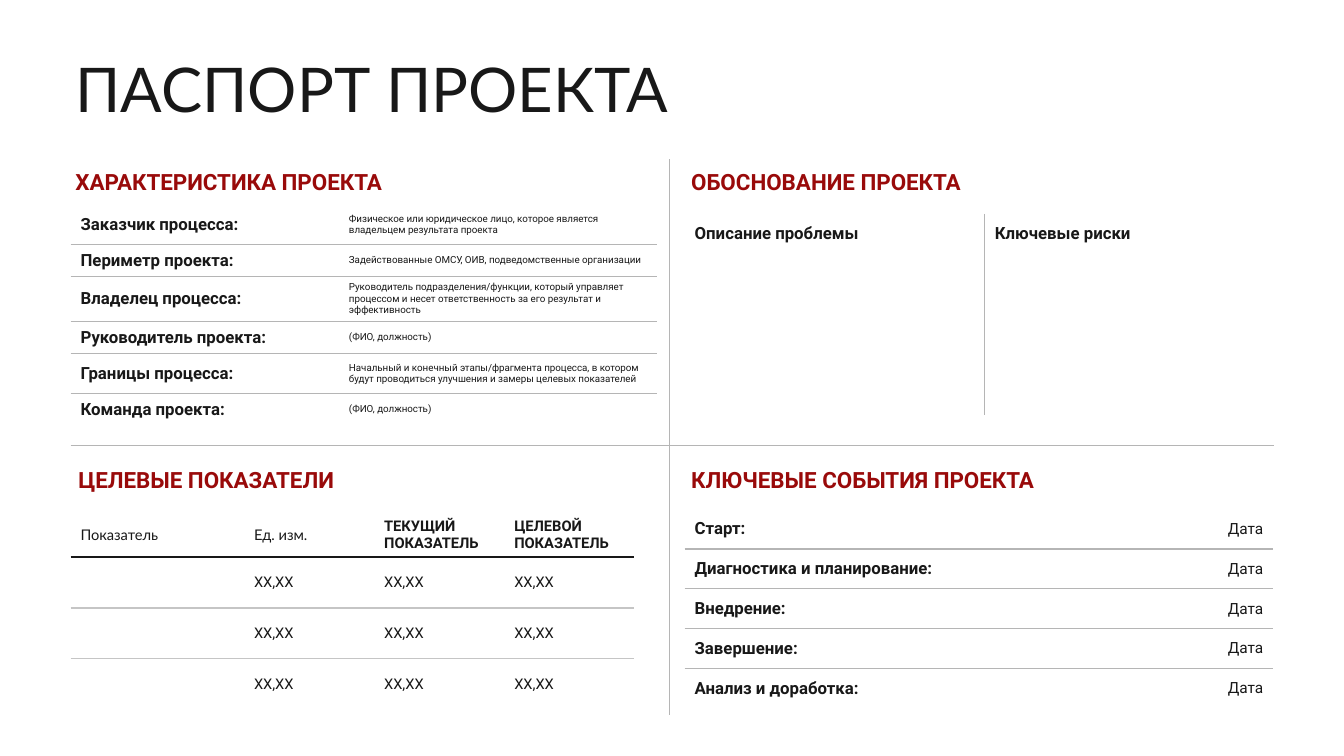
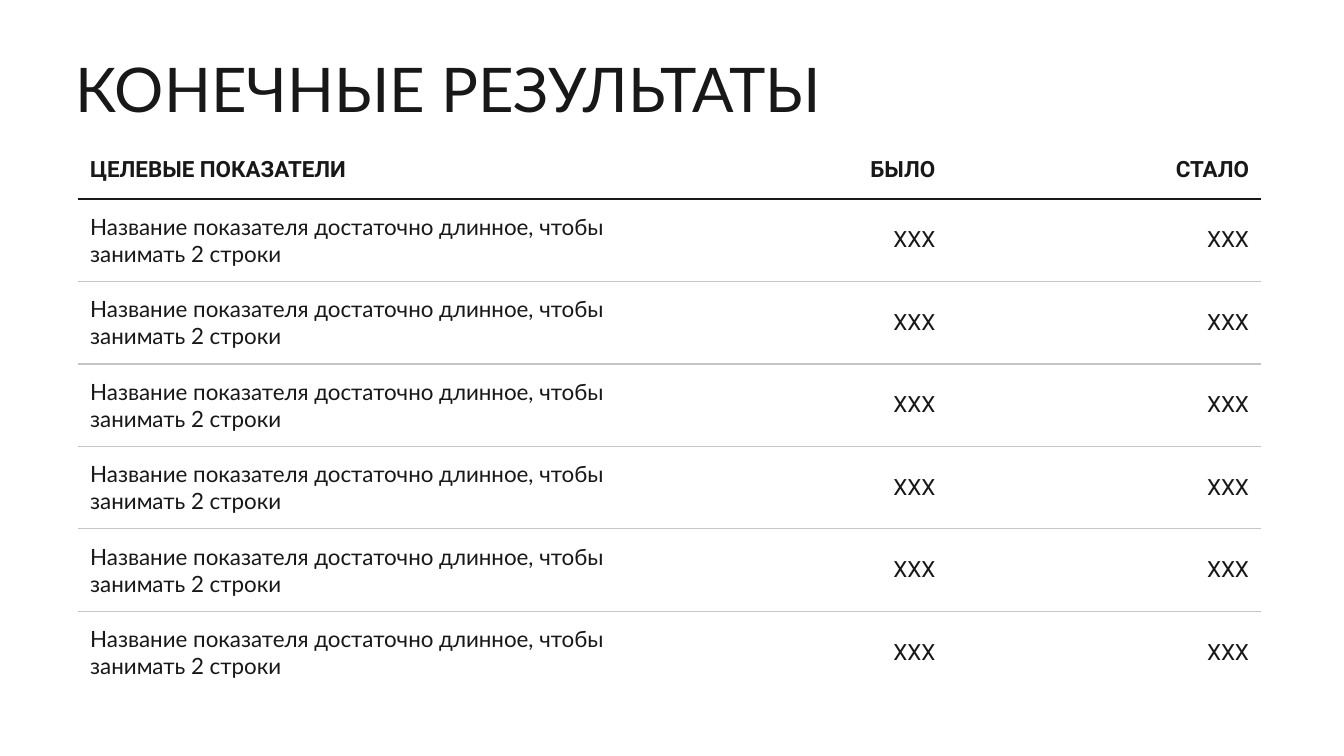
from dataclasses import dataclass
from typing import Optional

import pptx
import pptx.dml.color
import pptx.enum.shapes
import pptx.enum.text
import pptx.oxml.ns
import pptx.util
from lxml import etree

COLORS = {
    "text": "181818",
    "heading": "990A0A",
    "divider": "B5B5B5",
    "rule": "C5C5C5",
}
SANS, HEAVY = "Lato", "Roboto"
LEFT = pptx.enum.text.PP_ALIGN.LEFT
RIGHT = pptx.enum.text.PP_ALIGN.RIGHT
MIDDLE = pptx.enum.text.MSO_ANCHOR.MIDDLE

# The slide is a grid of square cells, 320 columns by 180 rows
COLUMNS, ROWS = 320, 180
SLIDE_WIDTH = pptx.util.Inches(13.333)
CELL = SLIDE_WIDTH / COLUMNS

# Lines that the parts of the project passport share
LEFT_EDGE, RIGHT_HALF, RIGHT_EDGE = 16.8, 163, 303.3
CROSS_X, CROSS_Y = 159.4, 106.1


@dataclass(frozen=True)
class TextStyle:
    size: float
    font: str = HEAVY
    bold: bool = False
    align: pptx.enum.text.PP_ALIGN = LEFT
    color: str = "text"


@dataclass(frozen=True)
class Border:
    color: str
    width: float = 1


@dataclass(frozen=True)
class Column:
    width: float
    style: TextStyle
    header_style: Optional[TextStyle] = None


@dataclass(frozen=True)
class TableLayout:
    left: float
    top: float
    columns: list[Column]
    row_heights: list[float]
    texts: list[tuple[str, ...]]
    rule: Optional[Border] = None
    header_rule: Optional[Border] = None
    divider: Optional[Border] = None
    margins: tuple[float, float] = (2.4, 1.2)


@dataclass(frozen=True)
class Heading:
    text: str
    left: float
    top: float


TITLE = TextStyle(44, SANS)
HEADING = TextStyle(16, bold=True, color="heading")
LABEL = TextStyle(12, bold=True)
HINT = TextStyle(7)
DATE = TextStyle(11, align=RIGHT)
UNIT_HEADER = TextStyle(10.5, SANS)
VALUE_HEADER = TextStyle(10.5, bold=True)
VALUE = TextStyle(10.5)
RESULT_NAME = TextStyle(16, SANS)
RESULT_VALUE = TextStyle(16, align=RIGHT)

GREY_RULE = Border("divider")
LIGHT_RULE = Border("rule")
DARK_RULE = Border("text", 1.5)

HEADINGS = [
    Heading("ХАРАКТЕРИСТИКА ПРОЕКТА", 15.6, 38.9),
    Heading("ОБОСНОВАНИЕ ПРОЕКТА", 162.2, 38.9),
    Heading("ЦЕЛЕВЫЕ ПОКАЗАТЕЛИ", 16.3, 109.7),
    Heading("КЛЮЧЕВЫЕ СОБЫТИЯ ПРОЕКТА", 162.2, 109.7),
]

CHARACTERISTICS = TableLayout(
    LEFT_EDGE, 48.7,
    [Column(63.9, LABEL), Column(75.7, HINT)],
    [9.5, 7.6, 10.7, 7.6, 9.5, 7.6],
    [
        ("Заказчик процесса:",
         "Физическое или юридическое лицо, которое является владельцем результата проекта"),
        ("Периметр проекта:",
         "Задействованные ОМСУ, ОИВ, подведомственные организации"),
        ("Владелец процесса:",
         "Руководитель подразделения/функции, который управляет процессом "
         "и несет ответственность за его результат и эффективность"),
        ("Руководитель проекта:", "(ФИО, должность)"),
        ("Границы процесса:",
         "Начальный и конечный этапы/фрагмента процесса, в котором будут "
         "проводиться улучшения и замеры целевых показателей"),
        ("Команда проекта:", "(ФИО, должность)"),
    ],
    rule=GREY_RULE,
)

JUSTIFICATION = TableLayout(
    RIGHT_HALF, 50.9,
    [Column(71.5, LABEL), Column(68.6, LABEL)],
    [9.4, 38.6],
    [("Описание проблемы", "Ключевые риски"), ("", "")],
    divider=GREY_RULE,
)

TARGETS = TableLayout(
    LEFT_EDGE, 121.9,
    [Column(41.3, VALUE, UNIT_HEADER), Column(31, VALUE, UNIT_HEADER)]
    + [Column(31, VALUE, VALUE_HEADER)] * 2,
    [10.6] + [12.1] * 3,
    [("Показатель", "Ед. изм.", "ТЕКУЩИЙ ПОКАЗАТЕЛЬ", "ЦЕЛЕВОЙ ПОКАЗАТЕЛЬ")]
    + [("", "ХХ,ХХ", "ХХ,ХХ", "ХХ,ХХ")] * 3,
    rule=LIGHT_RULE,
    header_rule=DARK_RULE,
)

STAGES = ["Старт:", "Диагностика и планирование:", "Внедрение:", "Завершение:",
          "Анализ и доработка:"]
EVENTS = TableLayout(
    RIGHT_HALF, 121.2,
    [Column(89.6, LABEL), Column(50.6, DATE)],
    [9.5] * len(STAGES),
    [(stage, "Дата") for stage in STAGES],
    rule=GREY_RULE,
)

RESULT_HEADER = TextStyle(16, bold=True, align=RIGHT)
RESULTS = TableLayout(
    18.6, 33.4,
    [Column(132.3, RESULT_NAME, TextStyle(16, bold=True))]
    + [Column(74.7, RESULT_VALUE, RESULT_HEADER)] * 2,
    [14] + [19.63] * 6,
    [("ЦЕЛЕВЫЕ ПОКАЗАТЕЛИ", "БЫЛО", "СТАЛО")]
    + [("Название показателя достаточно длинное, чтобы занимать 2 строки",
        "ХХХ", "ХХХ")] * 6,
    rule=LIGHT_RULE,
    header_rule=DARK_RULE,
    margins=(2.9, 1.45),
)


def grid(cells: float) -> pptx.util.Emu:
    return pptx.util.Emu(round(cells * CELL))


def rgb(name: str) -> pptx.dml.color.RGBColor:
    return pptx.dml.color.RGBColor.from_string(COLORS[name])


def write(text_frame, text: str, style: TextStyle) -> None:
    text_frame.text = text
    paragraph = text_frame.paragraphs[0]
    paragraph.alignment = style.align
    for run in paragraph.runs:
        run.font.size = pptx.util.Pt(style.size)
        run.font.name = style.font
        run.font.bold = style.bold
        run.font.color.rgb = rgb(style.color)


def add_titled_slide(presentation, title: str):
    slide = presentation.slides.add_slide(presentation.slide_layouts[5])
    shape = slide.shapes.title
    shape.left, shape.top = grid(15.6), grid(12.5)
    shape.width, shape.height = grid(304), grid(19)
    write(shape.text_frame, title, TITLE)
    shape.text_frame.auto_size = pptx.enum.text.MSO_AUTO_SIZE.NONE
    shape.text_frame.vertical_anchor = MIDDLE
    shape.text_frame.paragraphs[0].line_spacing = 0.9
    return slide


def add_heading(slide, heading: Heading) -> None:
    shape = slide.shapes.add_textbox(
        grid(heading.left), grid(heading.top), grid(141), grid(8.9))
    shape.text_frame.word_wrap = True
    write(shape.text_frame, heading.text, HEADING)


def add_line(slide, left: float, top: float, right: float, bottom: float) -> None:
    line = slide.shapes.add_connector(
        pptx.enum.shapes.MSO_CONNECTOR.STRAIGHT,
        grid(left), grid(top), grid(right), grid(bottom))
    line.line.color.rgb = rgb("divider")
    line.line.width = pptx.util.Pt(1)
    properties = line.element.find(pptx.oxml.ns.qn("p:spPr"))
    etree.SubElement(properties, pptx.oxml.ns.qn("a:effectLst"))


def set_border(cell, side: str, border: Optional[Border]) -> None:
    qn = pptx.oxml.ns.qn
    properties = cell._tc.get_or_add_tcPr()
    line = etree.SubElement(properties, qn(f"a:ln{side}"))
    if border is None:
        etree.SubElement(line, qn("a:noFill"))
        return
    line.set("w", str(int(pptx.util.Pt(border.width))))
    fill = etree.SubElement(line, qn("a:solidFill"))
    etree.SubElement(fill, qn("a:srgbClr"), val=COLORS[border.color])


def add_table(slide, layout: TableLayout) -> None:
    widths = [column.width for column in layout.columns]
    heights = layout.row_heights
    table = slide.shapes.add_table(
        len(heights), len(widths), grid(layout.left), grid(layout.top),
        grid(sum(widths)), grid(sum(heights))).table
    table.first_row = table.horz_banding = False
    for table_column, width in zip(table.columns, widths):
        table_column.width = grid(width)
    for table_row, height in zip(table.rows, heights):
        table_row.height = grid(height)

    # Lines run only between cells; the outer edges stay open
    inner_rules = [layout.rule] * (len(heights) - 1)
    if layout.header_rule:
        inner_rules[0] = layout.header_rule
    rules = [None, *inner_rules, None]
    dividers = [None, *[layout.divider] * (len(widths) - 1), None]

    for i, texts in enumerate(layout.texts):
        for j, (column, text) in enumerate(zip(layout.columns, texts)):
            cell = table.cell(i, j)
            is_header = i == 0 and column.header_style is not None
            write(cell.text_frame, text,
                  column.header_style if is_header else column.style)
            cell.vertical_anchor = MIDDLE
            cell.margin_left = cell.margin_right = grid(layout.margins[0])
            cell.margin_top = cell.margin_bottom = grid(layout.margins[1])
            set_border(cell, "L", dividers[j])
            set_border(cell, "R", dividers[j + 1])
            set_border(cell, "T", rules[i])
            set_border(cell, "B", rules[i + 1])
            cell.fill.background()


def add_passport_slide(presentation) -> None:
    slide = add_titled_slide(presentation, "ПАСПОРТ ПРОЕКТА")
    add_line(slide, CROSS_X, 37.9, CROSS_X, 170.2)
    add_line(slide, LEFT_EDGE, CROSS_Y, RIGHT_EDGE, CROSS_Y)
    for heading in HEADINGS:
        add_heading(slide, heading)
    for layout in (CHARACTERISTICS, JUSTIFICATION, TARGETS, EVENTS):
        add_table(slide, layout)


def add_results_slide(presentation) -> None:
    slide = add_titled_slide(presentation, "КОНЕЧНЫЕ РЕЗУЛЬТАТЫ")
    add_table(slide, RESULTS)


def main() -> None:
    presentation = pptx.Presentation()
    presentation.slide_width = SLIDE_WIDTH
    presentation.slide_height = grid(ROWS)
    add_passport_slide(presentation)
    add_results_slide(presentation)
    presentation.save("out.pptx")


if __name__ == "__main__":
    main()
